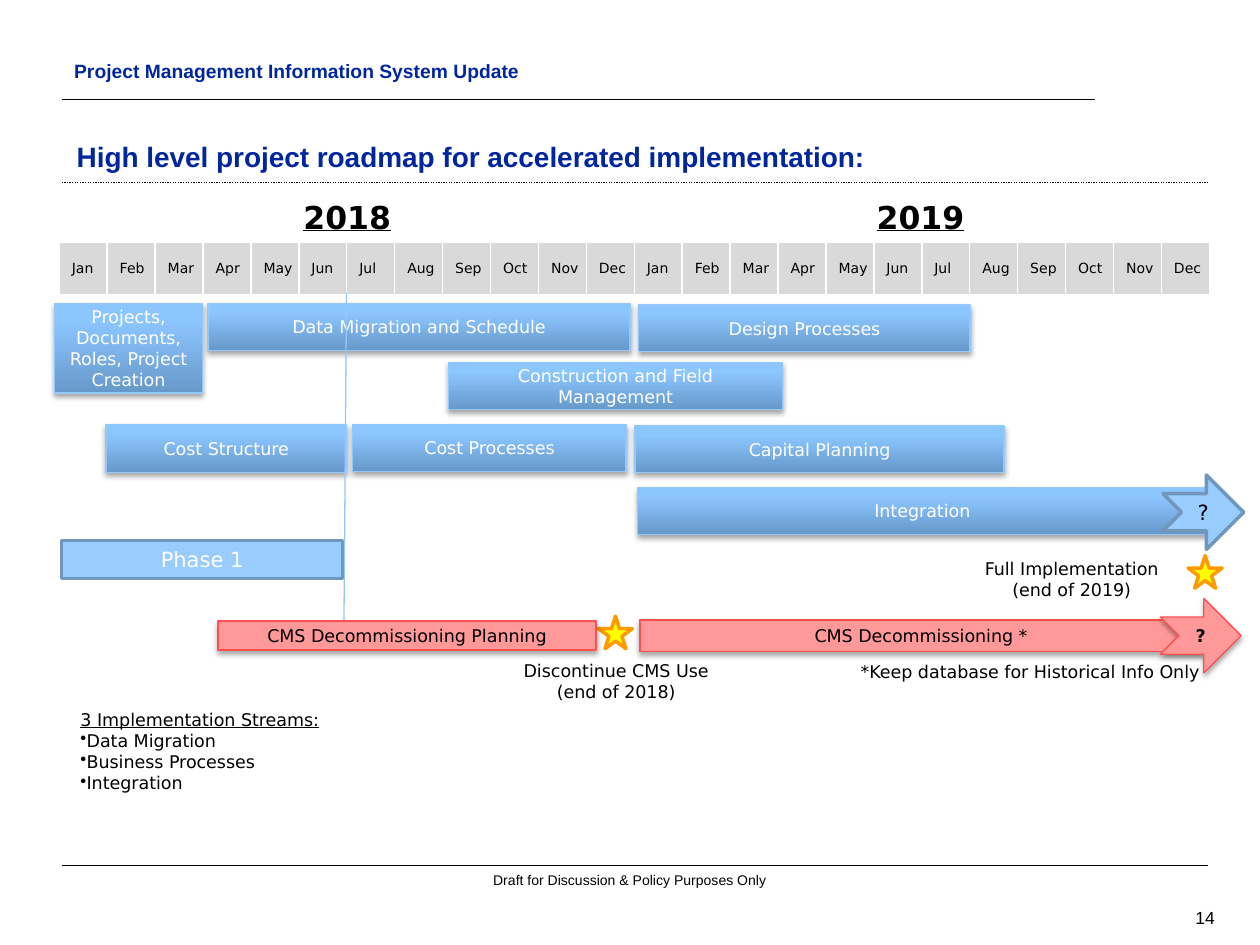
from copy import deepcopy

from lxml import etree
from pptx import Presentation
from pptx.dml.color import RGBColor
from pptx.enum.dml import MSO_LINE
from pptx.enum.shapes import MSO_CONNECTOR, MSO_SHAPE
from pptx.enum.text import MSO_ANCHOR, PP_ALIGN
from pptx.oxml.ns import qn
from pptx.util import Inches, Pt

RECT, STAR, ARROW = MSO_SHAPE.RECTANGLE, MSO_SHAPE.STAR_5_POINT, MSO_SHAPE.NOTCHED_RIGHT_ARROW
STRAIGHT, DOTTED = MSO_CONNECTOR.STRAIGHT, MSO_LINE.ROUND_DOT
LEFT, CENTER, RIGHT = PP_ALIGN.LEFT, PP_ALIGN.CENTER, PP_ALIGN.RIGHT
TOP, MIDDLE, BOTTOM = MSO_ANCHOR.TOP, MSO_ANCHOR.MIDDLE, MSO_ANCHOR.BOTTOM
SANS, ARIAL = "DejaVu Sans", "Arial"
BLACK, WHITE, NAVY, GREY = "000000", "FFFFFF", "00269E", "D9D9D9"
BLUE, BLUE_EDGE, BLUE_LINE = "99CCFF", "7197BD", "93C8FC"
PINK, RED, YELLOW, ORANGE = "FF9999", "FF5050", "FFFF00", "FF9900"
GRADIENT = [(0, "6798CA"), (0.8, "8CC6FF"), (1, "8EC7FF")]
MONTHS = "Jan Feb Mar Apr May Jun Jul Aug Sep Oct Nov Dec".split()


def rgb(value):
    """Turn a hex string into a colour."""
    return RGBColor.from_string(value)


def place(origin, box):
    """Turn a box relative to an origin into slide lengths."""
    x, y, w, h = box
    return [Inches(v) for v in (origin[0] + x, origin[1] + y, w, h)]


def style(p, text, size, color=BLACK, font=SANS, bold=False, align=LEFT):
    """Fill and format one paragraph."""
    p.text, p.alignment = text, align
    p.font.size, p.font.name, p.font.bold = Pt(size), font, bold
    p.font.color.rgb = rgb(color)


def add_text(s, origin, box, lines, size, anchor=TOP, wrap=True, **look):
    """Add a text box with one paragraph per line."""
    tf = s.shapes.add_textbox(*place(origin, box)).text_frame
    tf.word_wrap, tf.vertical_anchor = wrap, anchor
    for i, line in enumerate(lines):
        p = tf.add_paragraph() if i else tf.paragraphs[0]
        style(p, line, size, **look)
    return tf


def add_line(s, origin, start, end, color=BLACK, width=0.75, dash=None):
    """Add a straight line without shadow."""
    points = [Inches(o + v) for pt in (start, end) for o, v in zip(origin, pt)]
    line = s.shapes.add_connector(STRAIGHT, *points)
    line.line.color.rgb, line.line.width = rgb(color), Pt(width)
    if dash:
        line.line.dash_style = dash
    etree.SubElement(line._element.spPr, qn("a:effectLst"))


def set_gradient(sp):
    """Give a shape the blue bottom-to-top gradient."""
    sp.fill.gradient()
    sp.fill.gradient_angle = 90
    stops = sp._element.spPr.find(".//" + qn("a:gsLst"))
    stops.append(deepcopy(stops[-1]))
    for stop, (position, color) in zip(sp.fill.gradient_stops, GRADIENT):
        stop.position, stop.color.rgb = position, rgb(color)


def set_shadow(sp):
    """Give a shape a soft shadow below it."""
    effects = sp._element.spPr.find(qn("a:effectLst"))
    outer = etree.SubElement(effects, qn("a:outerShdw"), blurRad="40000",
                             dist="23000", dir="5400000", rotWithShape="0")
    color = etree.SubElement(outer, qn("a:srgbClr"), val=BLACK)
    etree.SubElement(color, qn("a:alpha"), val="35000")


def add_block(s, origin, box, text="", fill=None, line=BLUE_LINE, width=0.75,
              kind=RECT, shadow=True, size=10, color=BLACK, bold=False):
    """Add a labelled shape, with the blue gradient if no fill is given."""
    sp = s.shapes.add_shape(kind, *place(origin, box))
    if fill:
        sp.fill.solid()
        sp.fill.fore_color.rgb = rgb(fill)
    else:
        set_gradient(sp)
    sp.line.color.rgb, sp.line.width = rgb(line), Pt(width)
    sp.shadow.inherit = False
    if shadow:
        set_shadow(sp)
    if text:
        tf = sp.text_frame
        tf.word_wrap, tf.vertical_anchor = True, MIDDLE
        style(tf.paragraphs[0], text, size, color, bold=bold, align=CENTER)


def add_star(s, origin, x, y):
    """Add a milestone star."""
    add_block(s, origin, (x, y, 0.27, 0.26), fill=YELLOW, line=ORANGE, width=2,
              kind=STAR, shadow=False)


def draw_header(s, origin):
    """Draw the running head, the title and their rules."""
    add_line(s, origin, (0, 1.03), (9.1, 1.03), dash=DOTTED)
    add_line(s, origin, (0, 0.37), (8.2, 0.37), width=1)
    add_text(s, origin, (0.02, 0.49, 8.48, 0.51),
             ["High level project roadmap for accelerated implementation:"], 16,
             anchor=BOTTOM, color=NAVY, font=ARIAL, bold=True)
    add_text(s, origin, (0, 0, 7.99, 0.25),
             ["Project Management Information System Update"], 11,
             color=NAVY, font=ARIAL, bold=True)


def draw_footer(s, origin):
    """Draw the bottom rule, the draft notice and the page number."""
    add_line(s, origin, (0, 0), (9.1, 0))
    add_text(s, origin, (3.08, 0, 2.86, 0.24),
             ["Draft for Discussion & Policy Purposes Only"], 8, font=ARIAL, align=CENTER)
    add_text(s, origin, (8.42, 0.29, 0.83, 0.25), ["14"], 10,
             anchor=MIDDLE, font=ARIAL, align=RIGHT)


def set_borders(cell):
    """Give a cell white borders, thicker at the bottom."""
    tc_pr = cell._tc.get_or_add_tcPr()
    for i, (side, width) in enumerate([("L", 1), ("R", 1), ("T", 1), ("B", 3)]):
        ln = etree.Element(qn("a:ln" + side), w=str(Pt(width)))
        fill = etree.SubElement(ln, qn("a:solidFill"))
        etree.SubElement(fill, qn("a:srgbClr"), val=WHITE)
        tc_pr.insert(i, ln)


def draw_calendar(s, origin):
    """Draw the two years and their row of months."""
    months = MONTHS * 2
    box = place(origin, (0, 0.4, 9.13, 0.43))
    table = s.shapes.add_table(1, len(months), *box).table
    table.first_row = table.horz_banding = False
    table.rows[0].height = box[3]
    for column, cell, month in zip(table.columns, table.rows[0].cells, months):
        column.width = box[2] // len(months)
        cell.margin_left, cell.margin_right = Inches(0.1), 0
        cell.vertical_anchor = MIDDLE
        cell.fill.solid()
        cell.fill.fore_color.rgb = rgb(GREY)
        style(cell.text_frame.paragraphs[0], month, 8)
        set_borders(cell)
    for x, year in [(1.84, "2018"), (6.39, "2019")]:
        tf = add_text(s, origin, (x, 0, 0.92, 0.4), [year], 18, wrap=False, bold=True)
        tf.paragraphs[0].font.underline = True


def draw_implementation(s, origin):
    """Draw the blue work bars, the first phase and the final milestone."""
    bars = [
        ("Projects, Documents, Roles, Project Creation", 0, 0, 1.18, 0.71),
        ("Cost Structure", 0.41, 0.96, 1.91, 0.38),
        ("Data Migration and Schedule", 1.22, 0, 3.35, 0.37),
        ("Cost Processes", 2.37, 0.96, 2.17, 0.37),
        ("Integration", 4.63, 1.46, 4.52, 0.37),
        ("Design Processes", 4.64, 0.01, 2.63, 0.37),
        ("Construction and Field Management", 3.13, 0.47, 2.65, 0.37),
        ("Capital Planning", 4.61, 0.97, 2.93, 0.37),
    ]
    for text, *box in bars:
        add_block(s, origin, box, text, color=WHITE)
    add_star(s, origin, 9, 2)
    add_text(s, origin, (7.27, 1.97, 1.61, 0.44),
             ["Full Implementation (end of 2019)"], 10, align=CENTER)
    add_line(s, origin, (2.32, -0.09), (2.3, 2.52), color=BLUE_LINE)
    edged = dict(fill=BLUE, line=BLUE_EDGE, width=2, shadow=False, size=12)
    add_block(s, origin, (0.06, 1.88, 2.23, 0.3), "Phase 1", color=WHITE, **edged)
    add_block(s, origin, (8.8, 1.36, 0.64, 0.59), "?", kind=ARROW, **edged)


def draw_decommissioning(s, origin):
    """Draw the red bars with their milestone and notes."""
    red = dict(fill=PINK, line=RED)
    add_block(s, origin, (3.35, 0.17, 4.46, 0.25), "CMS Decommissioning *", **red)
    add_text(s, origin, (2.26, 0.44, 1.8, 0.44),
             ["Discontinue CMS Use", "(end of 2018)"], 10, align=CENTER)
    add_text(s, origin, (4.85, 0.45, 3.19, 0.27),
             ["*Keep database for Historical Info Only"], 10, align=CENTER)
    add_star(s, origin, 3.02, 0.14)
    add_block(s, origin, (0, 0.18, 3, 0.23), "CMS Decommissioning Planning", **red)
    add_block(s, origin, (7.48, 0, 0.64, 0.59), "?", kind=ARROW, bold=True, **red)


def draw_streams(s, origin):
    """Draw the bulleted list of implementation streams."""
    lines = ["3 Implementation Streams:", "Data Migration", "Business Processes", "Integration"]
    tf = add_text(s, origin, (0, 0, 2.18, 0.77), lines, 10)
    heading, *items = tf.paragraphs
    heading.font.underline = True
    for p in items:
        p_pr = p._p.get_or_add_pPr()
        p_pr.insert(0, etree.Element(qn("a:buChar"), char="•"))


def main():
    """Build the roadmap slide."""
    prs = Presentation()
    prs.slide_width, prs.slide_height = Inches(10), Inches(7.5)
    s = prs.slides.add_slide(prs.slide_layouts[6])
    draw_header(s, (0.49, 0.42))
    draw_footer(s, (0.49, 6.87))
    draw_calendar(s, (0.47, 1.52))
    draw_implementation(s, (0.43, 2.41))
    draw_decommissioning(s, (1.73, 4.75))
    draw_streams(s, (0.54, 5.58))
    prs.save("out.pptx")


if __name__ == "__main__":
    main()
